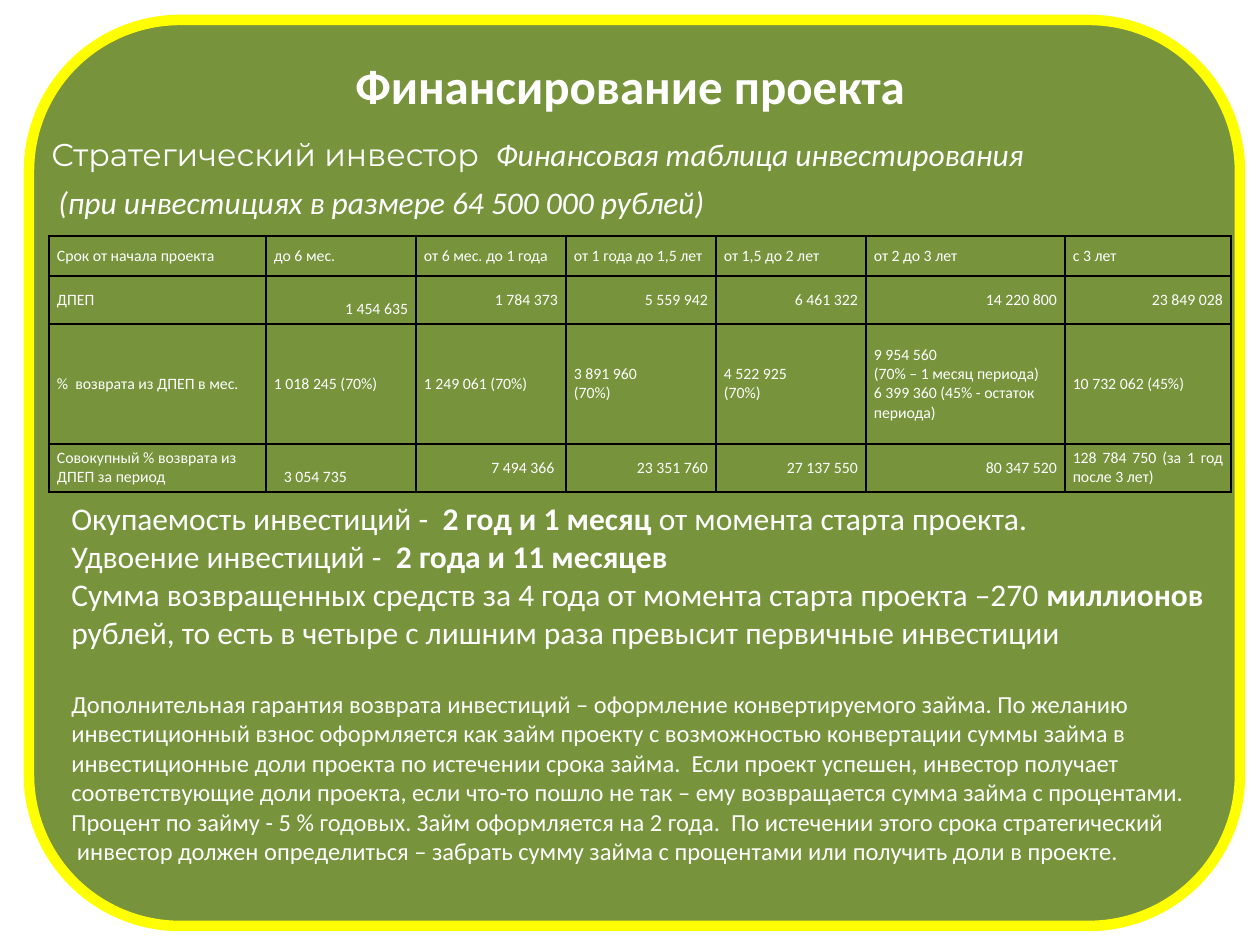
from lxml import etree
from pptx import Presentation
from pptx.dml.color import RGBColor
from pptx.enum.shapes import MSO_SHAPE
from pptx.enum.text import MSO_ANCHOR, MSO_AUTO_SIZE, PP_ALIGN
from pptx.oxml.ns import qn
from pptx.util import Pt

PX = 914400 / 126
LEFT, CENTER = PP_ALIGN.LEFT, PP_ALIGN.CENTER
RIGHT, JUSTIFY = PP_ALIGN.RIGHT, PP_ALIGN.JUSTIFY
MIDDLE = MSO_ANCHOR.MIDDLE
GROW = MSO_AUTO_SIZE.SHAPE_TO_FIT_TEXT
ROUNDED = MSO_SHAPE.ROUNDED_RECTANGLE

WHITE, BLACK, GREEN, YELLOW = "FFFFFF", "000000", "77933C", "FFFF00"
COLUMNS = [217, 150, 150, 150, 150, 199, 166]
ROWS = [40, 48, 120, 48]
LINE_9PT = 19  # height of one line of table text

FINANCE = [
    ["Срок от начала проекта", "до 6 мес.", "от 6 мес. до 1 года",
     "от 1 года до 1,5 лет", "от 1,5 до 2 лет", "от 2 до 3 лет", "с 3 лет"],
    ["ДПЕП", "1 454 635", "1 784 373", "5 559 942", "6 461 322",
     "14 220 800", "23 849 028"],
    ["%  возврата из ДПЕП в мес.", "1 018 245 (70%)", "1 249 061 (70%)",
     "3 891 960\n(70%)", "4 522 925\n(70%)",
     "9 954 560\n(70% – 1 месяц периода)\n6 399 360 (45% - остаток периода)",
     "10 732 062 (45%)"],
    ["Совокупный % возврата из ДПЕП за период", "3 054 735", "7 494 366 ",
     "23 351 760", "27 137 550", "80 347 520",
     "128 784 750 (за 1 год после 3 лет)"],
]

PAYBACK = [
    [("Окупаемость инвестиций -  ", False), ("2 год и 1 месяц ", True),
     ("от момента старта проекта.", False)],
    [("Удвоение инвестиций -  ", False), ("2 года и 11 месяцев", True)],
    [("Сумма возвращенных средств за 4 года от момента старта проекта –270 ", False),
     ("миллионов ", True),
     ("рублей, то есть в четыре с лишним раза превысит первичные инвестиции", False)],
]

GUARANTEE = [
    "Дополнительная гарантия возврата инвестиций – оформление конвертируемого займа. По желанию",
    "инвестиционный взнос оформляется как займ проекту с возможностью конвертации суммы займа в",
    "инвестиционные доли проекта по истечении срока займа.  Если проект успешен, инвестор получает",
    "соответствующие доли проекта, если что-то пошло не так – ему возвращается сумма займа с процентами.",
    "Процент по займу - 5 % годовых. Займ оформляется на 2 года.  По истечении этого срока стратегический",
    " инвестор должен определиться – забрать сумму займа с процентами или получить доли в проекте.",
]


def px(length):
    return round(length * PX)


def color(value):
    return RGBColor.from_string(value)


def add_span(para, text, size, bold=False, italic=False, font="Calibri"):
    span = para.add_run()
    span.text = text
    span.font.name = font
    span.font.size = Pt(size)
    span.font.bold = bold
    span.font.italic = italic
    span.font.color.rgb = color(WHITE)


def add_para(frame, align=LEFT, before=0, after=0):
    first = frame.paragraphs[0]
    para = frame.add_paragraph() if first.runs else first
    para.alignment = align
    para.space_before = Pt(before)
    para.space_after = Pt(after)
    return para


def add_frame(page, left, top, width, height):
    box = page.shapes.add_textbox(px(left), px(top), px(width), px(height))
    frame = box.text_frame
    frame.word_wrap = True
    frame.auto_size = GROW
    return frame


def add_panel(page):
    panel = page.shapes.add_shape(ROUNDED, px(29), px(20), px(1211), px(906))
    panel.shadow.inherit = False
    panel.fill.solid()
    panel.fill.fore_color.rgb = color(GREEN)
    panel.line.color.rgb = color(YELLOW)
    panel.line.width = Pt(6)


def add_borders(cell):
    properties = cell._tc.get_or_add_tcPr()
    for side in ("lnL", "lnR", "lnT", "lnB"):
        line = etree.SubElement(properties, qn("a:" + side), w=str(Pt(1)))
        fill = etree.SubElement(line, qn("a:solidFill"))
        etree.SubElement(fill, qn("a:srgbClr"), val=BLACK)


def cell_align(row, column):
    if row in (1, 3) and column > 0:
        return JUSTIFY if row == 3 and column in (1, 6) else RIGHT
    return LEFT


def fill_cell(cell, text, align):
    add_borders(cell)
    cell.fill.background()
    cell.vertical_anchor = MIDDLE
    cell.margin_left = cell.margin_right = px(8)
    cell.margin_top = cell.margin_bottom = 0
    for line in text.split("\n"):
        add_span(add_para(cell.text_frame, align), line, 9)


def add_finance_table(page):
    holder = page.shapes.add_table(len(ROWS), len(COLUMNS), px(49), px(236),
                                   px(sum(COLUMNS)), px(sum(ROWS)))
    table = holder.table
    table.first_row = table.horz_banding = False
    for column, width in zip(table.columns, COLUMNS):
        column.width = px(width)
    for row, height in zip(table.rows, ROWS):
        row.height = px(height)
    for r, texts in enumerate(FINANCE):
        for c, text in enumerate(texts):
            fill_cell(table.cell(r, c), text, cell_align(r, c))
    # The first period's amounts sit one line lower; its total is indented
    for r in (1, 3):
        table.cell(r, 1).margin_top = px(LINE_9PT)
    table.cell(3, 1).margin_left = px(18)


def add_heading(page):
    frame = add_frame(page, 39, 49, 1182, 277)
    add_span(add_para(frame, CENTER, after=12), "Финансирование проекта", 28, bold=True)
    para = add_para(frame, after=6)
    add_span(para, "Стратегический инвестор  ", 18, font="Montserrat")
    add_span(para, "Финансовая таблица инвестирования", 18, italic=True)
    add_span(add_para(frame, after=6),
             " (при инвестициях в размере 64 500 000 рублей)", 18, italic=True)


def add_conclusions(page):
    frame = add_frame(page, 59, 493, 1172, 437)
    for spans in PAYBACK:
        para = add_para(frame)
        for text, bold in spans:
            add_span(para, text, 18, bold)
    for number, line in enumerate(GUARANTEE):
        add_span(add_para(frame, before=0 if number else 22), line, 14)


def main():
    deck = Presentation()
    deck.slide_width, deck.slide_height = px(1260), px(945)
    page = deck.slides.add_slide(deck.slide_layouts[6])
    add_panel(page)
    add_heading(page)
    add_conclusions(page)
    add_finance_table(page)
    deck.save("out.pptx")


if __name__ == "__main__":
    main()
